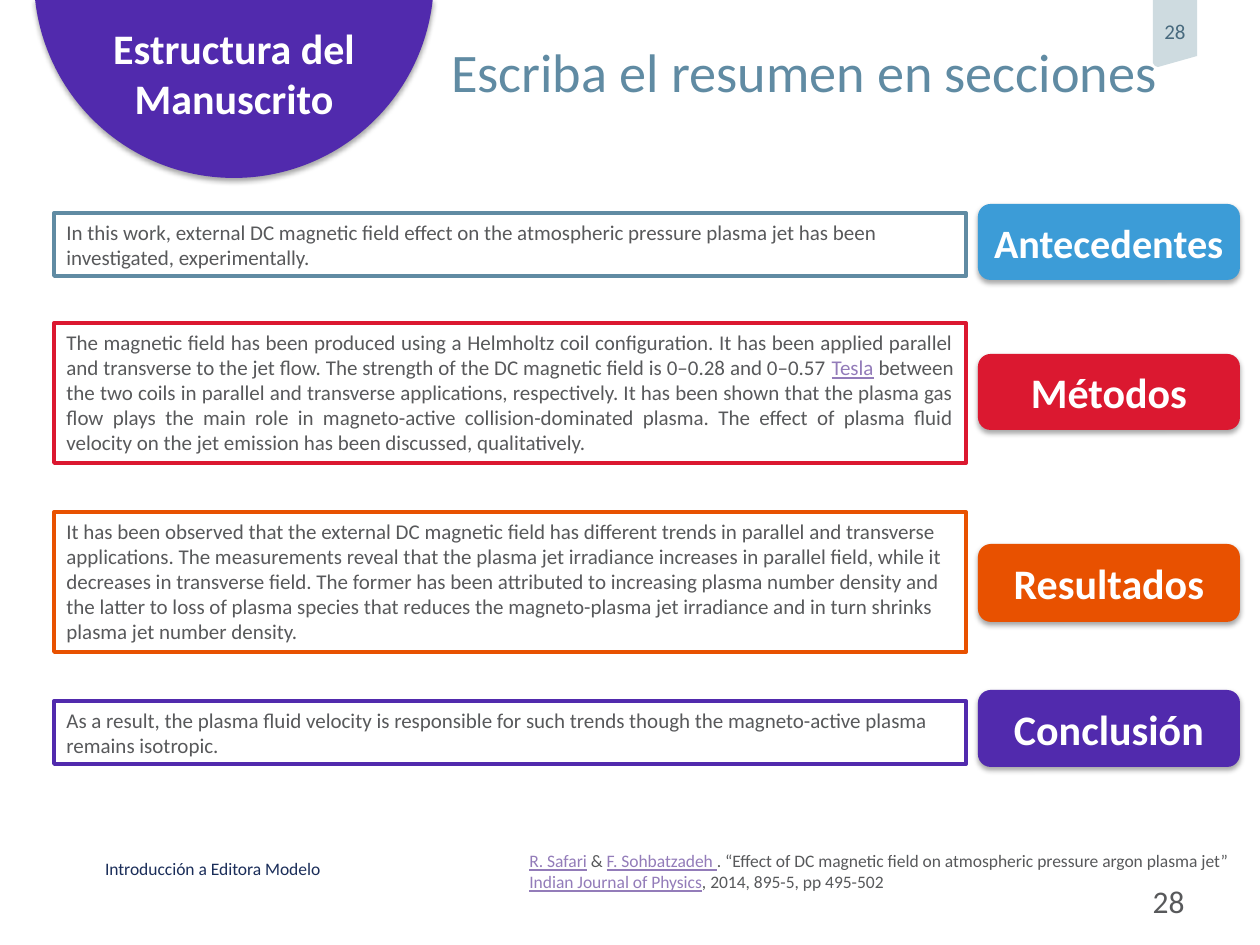
from lxml.etree import SubElement
from pptx import Presentation
from pptx.dml.color import RGBColor
from pptx.enum.shapes import MSO_SHAPE
from pptx.enum.text import MSO_ANCHOR, PP_ALIGN
from pptx.oxml.ns import qn
from pptx.util import Pt

PX = 914400 / 126
FONT = "Calibri"
WHITE = RGBColor(0xFF, 0xFF, 0xFF)
GREY = RGBColor(0x58, 0x59, 0x5B)
NAVY = RGBColor(0x1A, 0x2D, 0x59)
STEEL = RGBColor(0x60, 0x8B, 0xA3)
SLATE = RGBColor(0x48, 0x6A, 0x7E)
MIST = RGBColor(0xCE, 0xDB, 0xE0)
LILAC = RGBColor(0x93, 0x7C, 0xB9)
PURPLE = RGBColor(0x51, 0x2A, 0xAD)
ORANGE = RGBColor(0xE8, 0x51, 0x00)
RED = RGBColor(0xDB, 0x18, 0x30)
BLUE = RGBColor(0x3C, 0x9C, 0xD7)

LABEL_X, LABEL_W = 978, 262
BOX_X, BOX_W = 54, 912
SECTIONS = [
    ("Antecedentes", 23, BLUE, STEEL, (204, 76), (213, 63), PP_ALIGN.LEFT, [
        "In this work, external DC magnetic field effect on the atmospheric pressure plasma jet "
        "has been investigated, experimentally."]),
    ("Métodos", 24, RED, RED, (354, 76), (323, 140), PP_ALIGN.JUSTIFY, [
        "The magnetic field has been produced using a Helmholtz coil configuration. It has been "
        "applied parallel and transverse to the jet flow. The strength of the DC magnetic field "
        "is 0–0.28 and 0–0.57 ",
        ("Tesla",),
        " between the two coils in parallel and transverse applications, respectively. It has "
        "been shown that the plasma gas flow plays the main role in magneto-active "
        "collision-dominated plasma. The effect of plasma fluid velocity on the jet emission "
        "has been discussed, qualitatively."]),
    ("Resultados", 24, ORANGE, ORANGE, (544, 78), (512, 140), PP_ALIGN.LEFT, [
        "It has been observed that the external DC magnetic field has different trends in "
        "parallel and transverse applications. The measurements reveal that the plasma jet "
        "irradiance increases in parallel field, while it decreases in transverse field. The "
        "former has been attributed to increasing plasma number density and the latter to loss "
        "of plasma species that reduces the magneto-plasma jet irradiance and in turn shrinks "
        "plasma jet number density."]),
    ("Conclusión", 24, PURPLE, PURPLE, (690, 77), (701, 63), PP_ALIGN.LEFT, [
        "As a result, the plasma fluid velocity is responsible for such trends though the "
        "magneto-active plasma remains isotropic."]),
]
CITATION = [
    ("R. Safari",), " & ", ("F. Sohbatzadeh ",),
    ". “Effect of DC magnetic field on atmospheric pressure argon plasma jet”", "\n",
    ("Indian Journal of Physics",), ", 2014, 895-5, pp 495-502",
]


def px(*lengths):
    """Turn pixel lengths into EMU."""
    return [round(n * PX) for n in lengths]


def write(sp, parts, size, color, align=PP_ALIGN.LEFT, anchor=MSO_ANCHOR.TOP, bold=False,
          margins=None):
    """Fill one paragraph; parts held in a tuple look like links."""
    tf = sp.text_frame
    tf.word_wrap = True
    tf.vertical_anchor = anchor
    if margins:
        tf.margin_left, tf.margin_top, tf.margin_right, tf.margin_bottom = px(*margins)
    p = tf.paragraphs[0]
    p.alignment = align
    for part in parts:
        if part == "\n":
            p.add_line_break()
            continue
        linked = isinstance(part, tuple)
        r = p.add_run()
        r.text = part[0] if linked else part
        r.font.name, r.font.size, r.font.bold = FONT, Pt(size), bold
        r.font.color.rgb = LILAC if linked else color
        if linked:
            r.font.underline = True


def add_text(s, box, parts, size, color, **style):
    """Add a text box."""
    write(s.shapes.add_textbox(*px(*box)), parts, size, color, **style)


def add_shadow(sp):
    """Give a shape a soft shadow below it."""
    sp.shadow.inherit = False
    effects = sp._element.spPr.find(qn("a:effectLst"))
    shadow = SubElement(effects, qn("a:outerShdw"), blurRad=str(Pt(3.1)), dist=str(Pt(1.8)),
                        dir="5400000", rotWithShape="0")
    black = SubElement(shadow, qn("a:srgbClr"), val="000000")
    SubElement(black, qn("a:alpha"), val="35000")


def add_filled(shapes, kind, box, color):
    """Add a filled shape with a shadow and no outline."""
    sp = shapes.add_shape(kind, *px(*box))
    sp.fill.solid()
    sp.fill.fore_color.rgb = color
    sp.line.fill.background()
    add_shadow(sp)
    return sp


def add_page_tab(s):
    """Add the ribbon with the page number at the top edge."""
    builder = s.shapes.build_freeform(1153, 0, scale=PX)
    builder.add_line_segments([(1197, 0), (1197, 56), (1158, 67), (1155, 66), (1153, 63)])
    sp = builder.convert_to_shape()
    sp.shadow.inherit = False
    sp.fill.solid()
    sp.fill.fore_color.rgb = MIST
    sp.line.fill.background()
    write(sp, ["28"], 12, SLATE, align=PP_ALIGN.CENTER, anchor=MSO_ANCHOR.MIDDLE,
          margins=(0, 0, 0, 5))


def add_badge(s):
    """Add the round chapter badge cut by the top edge."""
    sp = add_filled(s.shapes, MSO_SHAPE.CHORD, (34, -222, 400, 400), PURPLE)
    for i, degrees in enumerate((6, 174)):
        sp.adjustments[i] = degrees * 0.6
    add_text(s, (87, 16, 294, 115), ["Estructura del Manuscrito"], 24, WHITE,
             align=PP_ALIGN.CENTER, bold=True)


def add_section(s, name, size, fill, outline, label_span, box_span, align, parts):
    """Add a group of a coloured label and its outlined passage."""
    shapes = s.shapes.add_group_shape().shapes
    (label_y, label_h), (box_y, box_h) = label_span, box_span
    label = add_filled(shapes, MSO_SHAPE.ROUNDED_RECTANGLE,
                       (LABEL_X, label_y, LABEL_W, label_h), fill)
    write(label, [name], size, WHITE, align=PP_ALIGN.CENTER, anchor=MSO_ANCHOR.MIDDLE, bold=True)
    box = shapes.add_shape(MSO_SHAPE.RECTANGLE, *px(BOX_X, box_y, BOX_W, box_h))
    box.shadow.inherit = False
    box.fill.background()
    box.line.color.rgb = outline
    box.line.width = Pt(2.25)
    write(box, parts, 12, GREY, align=align)


def main():
    """Build the slide."""
    prs = Presentation()
    prs.slide_width, prs.slide_height = px(1260, 945)
    s = prs.slides.add_slide(prs.slide_layouts[5])
    title = s.shapes.title
    title.left, title.top, title.width, title.height = px(451, 38, 809, 117)
    write(title, ["Escriba el resumen en secciones"], 31, STEEL, margins=(0, 0, 0, 0))
    add_text(s, (105, 857, 447, 22), ["Introducción a Editora Modelo"], 10, NAVY,
             anchor=MSO_ANCHOR.MIDDLE, margins=(0, 0, 0, 0))
    add_page_tab(s)
    add_badge(s)
    add_text(s, (903, 876, 294, 50), ["28"], 18, GREY, align=PP_ALIGN.RIGHT)
    for section in SECTIONS:
        add_section(s, *section)
    add_text(s, (517, 844, 917, 55), CITATION, 10, GREY)
    prs.save("out.pptx")


if __name__ == "__main__":
    main()
